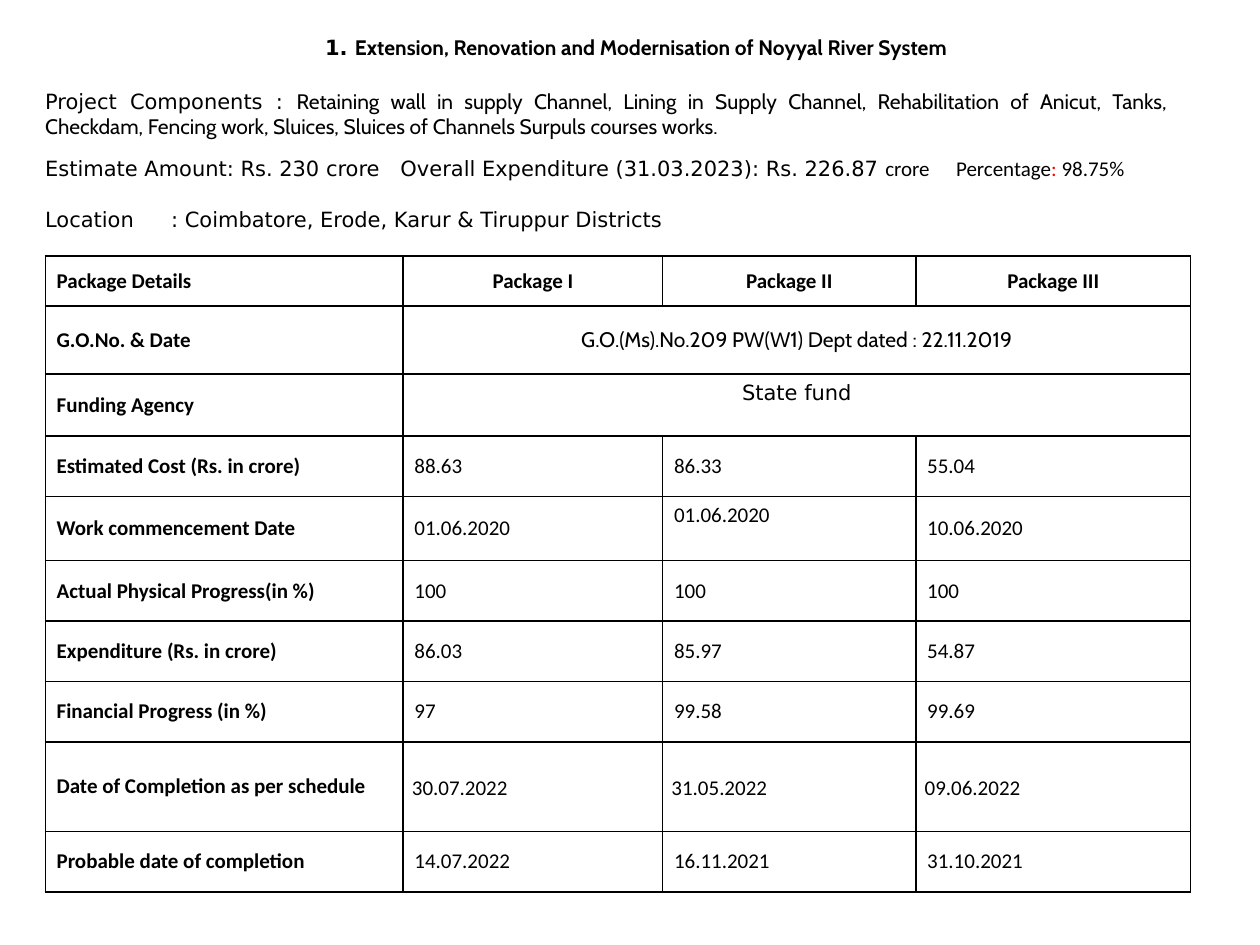
from lxml import etree
from pptx import Presentation
from pptx.dml.color import RGBColor
from pptx.enum.text import MSO_ANCHOR, MSO_AUTO_SIZE, PP_ALIGN
from pptx.oxml.ns import qn
from pptx.util import Inches, Pt

COLORS = {"text": "000000", "accent": "FF0000", "paper": "FFFFFF"}
SANS, CABIN, CALIBRI = "DejaVu Sans", "Cabin", "Calibri"

HEADING = [("1. ", SANS),
           ("Extension, Renovation and Modernisation of Noyyal River System", CABIN)]

# Each detail line: runs (text, font, colour), tab stops, space after in points
DETAILS = [
    ([("Project Components : ", SANS, "text"),
      ("Retaining wall in supply Channel, Lining in Supply Channel, Rehabilitation of "
       "Anicut, Tanks, Checkdam, Fencing work, Sluices, Sluices of Channels Surpuls "
       "courses works.", CABIN, "text")], [], 10),
    ([("Estimate Amount: Rs. 230 crore\tOverall Expenditure (31.03.2023): Rs. 226.87 ",
       SANS, "text"),
      ("crore\tPercentage", CALIBRI, "text"),
      (": ", CALIBRI, "accent"),
      ("98.75%", CALIBRI, "text")], [2.82, 7.23], 14.5),
    ([("Location\t: Coimbatore, Erode, Karur & Tiruppur Districts", SANS, "text")], [1], 0),
]

PACKAGES = [
    ["Package Details", "Package I", "Package II", "Package III"],
    ["G.O.No. & Date", "G.O.(Ms).No.209 PW(W1) Dept dated : 22.11.2019"],
    ["Funding Agency", "State fund"],
    ["Estimated Cost (Rs. in crore)", "88.63", "86.33", "55.04"],
    ["Work commencement Date", "01.06.2020", "01.06.2020", "10.06.2020"],
    ["Actual Physical Progress(in %)", "100", "100", "100"],
    ["Expenditure (Rs. in crore)", "86.03", "85.97", "54.87"],
    ["Financial Progress (in %)", "97", "99.58", "99.69"],
    ["Date of Completion as per schedule", "30.07.2022", "31.05.2022", "09.06.2022"],
    ["Probable date of completion", "14.07.2022", "16.11.2021", "31.10.2021"],
]
COLUMN_WIDTHS = [2.84, 2.06, 2.01, 2.18]
ROW_HEIGHTS = [0.4, 0.54, 0.49, 0.48, 0.51, 0.48, 0.48, 0.48, 0.71, 0.48]
GO_ROW, FUNDING_ROW, SCHEDULE_ROW = 1, 2, 8
MERGED_FONTS = {GO_ROW: CABIN, FUNDING_ROW: SANS}
TOP_ANCHORED = {(FUNDING_ROW, 1), (4, 2)}


def rgb(name):
    return RGBColor.from_string(COLORS[name])


def style(font, face=None, bold=None, color="text"):
    font.size = Pt(12)
    font.name = face
    font.bold = bold
    font.color.rgb = rgb(color)


def add_run(paragraph, text, face, color="text", bold=False):
    run = paragraph.add_run()
    run.text = text
    style(run.font, face, bold, color)


def set_tabs(paragraph, stops):
    tabs = etree.SubElement(paragraph._p.get_or_add_pPr(), qn("a:tabLst"))
    for stop in stops:
        etree.SubElement(tabs, qn("a:tab"), pos=str(Inches(stop)), algn="l")


def set_borders(cell):
    properties = cell._tc.get_or_add_tcPr()
    for position, side in enumerate(("lnL", "lnR", "lnT", "lnB")):
        line = etree.Element(qn(f"a:{side}"), w=str(Pt(1)))
        fill = etree.SubElement(line, qn("a:solidFill"))
        etree.SubElement(fill, qn("a:srgbClr"), val=COLORS["text"])
        properties.insert(position, line)


def add_heading(slide):
    heading = slide.shapes.title
    heading.left, heading.top = Inches(0.3), Inches(0.22)
    heading.width, heading.height = Inches(9.5), Inches(0.3)
    frame = heading.text_frame
    frame.auto_size = MSO_AUTO_SIZE.NONE
    frame.vertical_anchor = MSO_ANCHOR.MIDDLE
    frame.paragraphs[0].alignment = PP_ALIGN.CENTER
    for text, face in HEADING:
        add_run(frame.paragraphs[0], text, face, bold=True)


def add_details(slide):
    box = slide.shapes.add_textbox(Inches(0.26), Inches(0.65), Inches(9.11), Inches(1.65))
    box.fill.solid()
    box.fill.fore_color.rgb = rgb("paper")
    frame = box.text_frame
    frame.word_wrap = True
    for index, (runs, stops, space_after) in enumerate(DETAILS):
        paragraph = frame.add_paragraph() if index else frame.paragraphs[0]
        paragraph.alignment = PP_ALIGN.JUSTIFY
        paragraph.space_after = Pt(space_after)
        if stops:
            set_tabs(paragraph, stops)
        for text, face, color in runs:
            add_run(paragraph, text, face, color)


def fill_cell(cell, text, row, column):
    is_label = row == 0 or column == 0
    is_schedule = row == SCHEDULE_ROW and column > 0
    cell.text = text
    paragraph = cell.text_frame.paragraphs[0]
    face = MERGED_FONTS.get(row, CALIBRI) if column else CALIBRI
    style(paragraph.font, face, is_label)
    if column and (row == 0 or row in MERGED_FONTS):
        paragraph.alignment = PP_ALIGN.CENTER
    if is_schedule:
        paragraph.alignment = PP_ALIGN.JUSTIFY
        paragraph.line_spacing = 1.15
    cell.margin_left = cell.margin_right = Inches(0.07 if is_schedule else 0.09)
    cell.margin_top = cell.margin_bottom = Inches(0 if is_schedule else 0.05)
    top = (row, column) in TOP_ANCHORED
    cell.vertical_anchor = MSO_ANCHOR.TOP if top else MSO_ANCHOR.MIDDLE


def add_packages(slide):
    table = slide.shapes.add_table(
        len(PACKAGES), len(COLUMN_WIDTHS), Inches(0.36), Inches(2.03),
        Inches(sum(COLUMN_WIDTHS)), Inches(sum(ROW_HEIGHTS))).table
    table.first_row = table.horz_banding = False
    for column, width in zip(table.columns, COLUMN_WIDTHS):
        column.width = Inches(width)
    for row, height in zip(table.rows, ROW_HEIGHTS):
        row.height = Inches(height)
    for cell in table.iter_cells():
        cell.fill.background()
        set_borders(cell)
    for row, texts in enumerate(PACKAGES):
        if row in MERGED_FONTS:
            table.cell(row, 1).merge(table.cell(row, 3))
        for column, text in enumerate(texts):
            fill_cell(table.cell(row, column), text, row, column)


def main():
    presentation = Presentation()
    presentation.slide_width, presentation.slide_height = Inches(10), Inches(7.5)
    slide = presentation.slides.add_slide(presentation.slide_layouts[5])
    add_details(slide)
    add_heading(slide)
    add_packages(slide)
    presentation.save("out.pptx")


if __name__ == "__main__":
    main()
